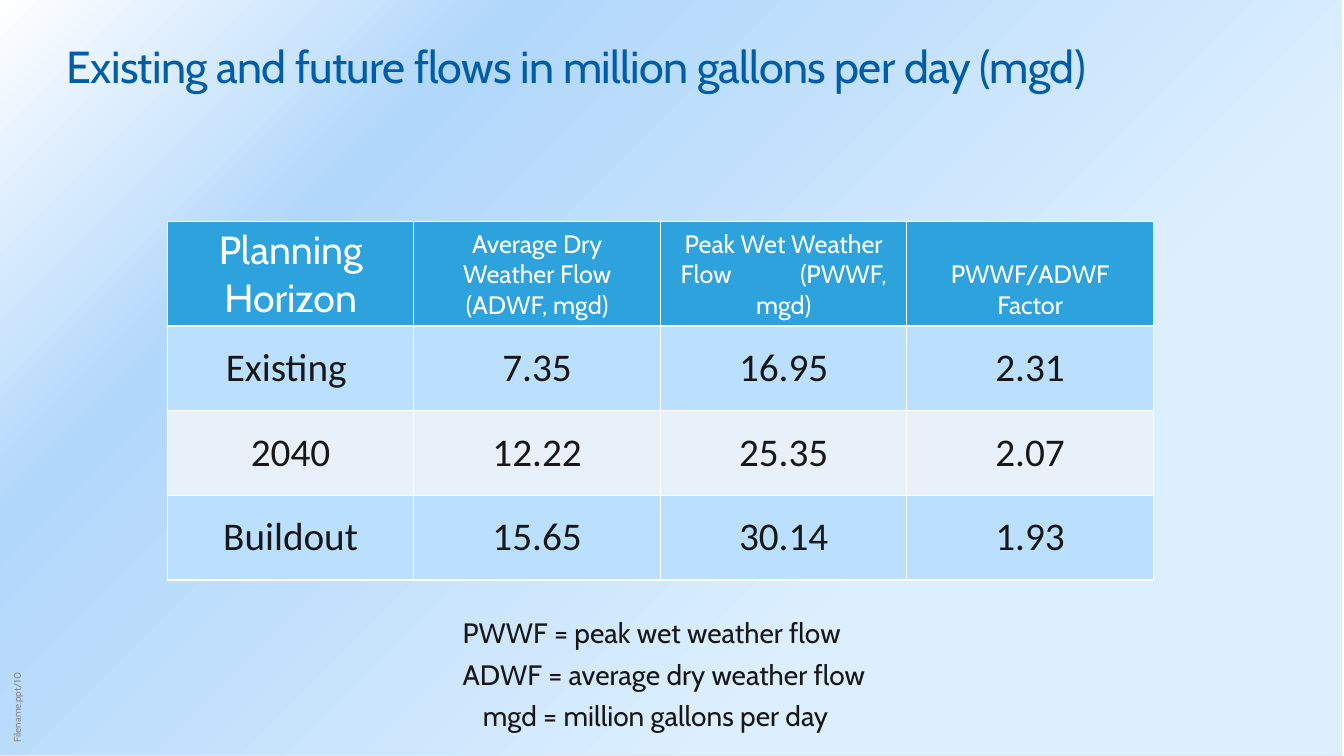
import pptx
import pptx.util
import pptx.oxml
import pptx.oxml.ns
import pptx.dml.color
import pptx.enum.shapes
import pptx.enum.text
from pptx.util import Inches

ANCHOR = pptx.enum.text.MSO_ANCHOR
INK = "181717"


def color(hex_code):
    return pptx.dml.color.RGBColor.from_string(hex_code)


def style(paragraph, size, hex_code, font="Cabin"):
    for run in paragraph.runs:
        run.font.size = pptx.util.Pt(size)
        run.font.name = font
        run.font.bold = False
        run.font.color.rgb = color(hex_code)


deck = pptx.Presentation()
deck.slide_width = Inches(13.33)
deck.slide_height = Inches(7.5)
slide = deck.slides.add_slide(deck.slide_layouts[5])
namespace = pptx.oxml.ns.nsdecls("a")

backdrop = slide.shapes.add_shape(
    pptx.enum.shapes.MSO_SHAPE.RECTANGLE, Inches(-0.02), 0, Inches(13.33), Inches(7.5))
stops = "".join(
    f'<a:gs pos="{percent * 1000}"><a:srgbClr val="{hex_code}"/></a:gs>'
    for percent, hex_code in [(30, "DCEFFE"), (75, "B1D7FB"), (100, "FFFFFF")])
backdrop._element.spPr.insert(2, pptx.oxml.parse_xml(
    f'<a:gradFill {namespace} rotWithShape="1"><a:gsLst>{stops}</a:gsLst>'
    '<a:path path="circle"><a:fillToRect l="100000" t="100000"/></a:path>'
    '<a:tileRect r="-100000" b="-100000"/></a:gradFill>'))
backdrop.line.color.rgb = color("E7E6E6")
backdrop.line.width = pptx.util.Pt(0.75)
backdrop.shadow.inherit = False
slide.shapes._spTree.insert(2, backdrop._element)

title = slide.shapes.title
title.left, title.top = Inches(0.56), Inches(0.33)
title.width, title.height = Inches(12.22), Inches(1.2)
title.text_frame.text = "Existing and future flows in million gallons per day (mgd)"
title.text_frame.vertical_anchor = ANCHOR.TOP
heading = title.text_frame.paragraphs[0]
heading.alignment = pptx.enum.text.PP_ALIGN.LEFT
style(heading, 32, "015DA8")
heading.runs[0].font._element.set("spc", "-50")

file_label = slide.shapes.add_textbox(Inches(-1.17), Inches(5.97), Inches(2.67), Inches(0.22))
file_label.rotation = 270
label_frame = file_label.text_frame
label_frame.word_wrap = True
label_frame.vertical_anchor = ANCHOR.BOTTOM
label_frame.margin_left = label_frame.margin_right = Inches(0.05)
label_frame.text = "Filename.ppt/10"
style(label_frame.paragraphs[0], 7, "8B8585")

flow_rows = [
    ["Planning Horizon", "Average Dry Weather Flow (ADWF, mgd)",
     "Peak Wet Weather Flow", "PWWF/ADWF Factor"],
    ["Existing ", "7.35", "16.95", "2.31"],
    ["2040", "12.22", "25.35", "2.07"],
    ["Buildout", "15.65", "30.14", "1.93"],
]
row_fills = ["2DA2DC", "BBE0FF", "E8F0F9", "BBE0FF"]
flows = slide.shapes.add_table(
    4, 4, Inches(1.66), Inches(2.2), Inches(9.78), Inches(3.52)).table
flows.first_row = flows.horz_banding = False
for column in flows.columns:
    column.width = Inches(2.445)
for r, values in enumerate(flow_rows):
    flows.rows[r].height = Inches(0.84 if r else 1)
    for c, value in enumerate(values):
        cell = flows.cell(r, c)
        cell.text_frame.text = value
        cell.vertical_anchor = ANCHOR.MIDDLE if r else ANCHOR.BOTTOM
        entry = cell.text_frame.paragraphs[0]
        entry.alignment = pptx.enum.text.PP_ALIGN.CENTER
        if (r, c) == (0, 2):
            gap = entry.add_run()
            gap.text = " "
            gap.font._element.set("spc", "4500")
            entry.add_run().text = "(PWWF, mgd)"
        if r:
            style(entry, 28, INK, "Calibri")
        else:
            style(entry, 18 if c else 28, "FFFFFF")
        borders = cell._tc.get_or_add_tcPr()
        for side in ("lnL", "lnR", "lnT", "lnB"):
            borders.append(pptx.oxml.parse_xml(
                f'<a:{side} {namespace} w="12700"><a:solidFill>'
                f'<a:srgbClr val="FFFFFF"/></a:solidFill></a:{side}>'))
        cell.fill.solid()
        cell.fill.fore_color.rgb = color(row_fills[r])

definitions = [
    (4.49, "PWWF = peak wet weather flow"),
    (4.49, "ADWF = average dry weather flow"),
    (4.69, "mgd = million gallons per day"),
]
for i, (left, meaning) in enumerate(definitions):
    definition = slide.shapes.add_textbox(
        Inches(left), Inches(6.06 + 0.41 * i), Inches(4.81), Inches(0.44))
    definition.text_frame.word_wrap = True
    definition.text_frame.text = meaning
    style(definition.text_frame.paragraphs[0], 20, INK)

deck.save("out.pptx")
